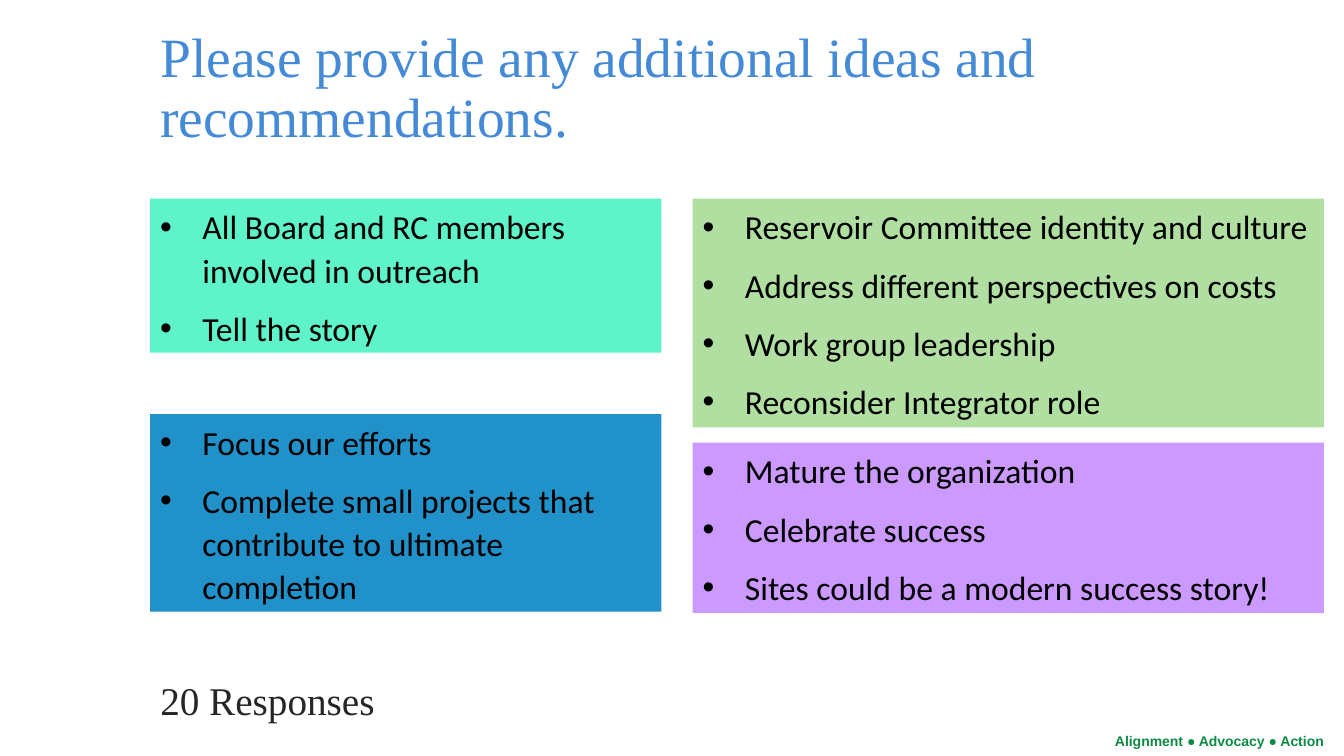
import pptx
import pptx.dml.color
import pptx.enum.shapes
import pptx.enum.text
import pptx.util
from lxml import etree
from pptx.oxml.ns import qn
from pptx.util import Inches, Pt


def rgb(value):
    return pptx.dml.color.RGBColor.from_string(value)


def write(sp, *lines, font, size, color, bold=False, bullet=None,
          spacing=1.0, after=0, anchor="TOP"):
    """Fill a shape with one paragraph per line, bulleted if asked."""
    tf = sp.text_frame
    tf.word_wrap = True
    tf.auto_size = pptx.enum.text.MSO_AUTO_SIZE.NONE
    tf.vertical_anchor = pptx.enum.text.MSO_ANCHOR[anchor]
    for i, line in enumerate(lines):
        p = tf.paragraphs[0] if i == 0 else tf.add_paragraph()
        pPr = p._p.get_or_add_pPr()
        pPr.set("marL", str(Inches(0.42) if bullet else 0))
        pPr.set("indent", str(Inches(-0.42) if bullet else 0))
        if bullet:
            etree.SubElement(pPr, qn("a:buFont"), typeface="Arial")
            etree.SubElement(pPr, qn("a:buChar"), char=bullet)
        else:
            etree.SubElement(pPr, qn("a:buNone"))
        p.alignment = pptx.enum.text.PP_ALIGN.LEFT
        p.line_spacing = spacing
        p.space_before = Pt(0)
        p.space_after = Pt(after)
        r = p.add_run()
        r.text = line
        r.font.name = font
        r.font.size = Pt(size)
        r.font.bold = bold
        r.font.color.rgb = rgb(color)


prs = pptx.Presentation()
prs.slide_width = Inches(13.33)
prs.slide_height = Inches(7.5)
slide = prs.slides.add_slide(prs.slide_layouts[1])

title, body = slide.placeholders
for sp, top, height in [(title, 0.26, 1.25), (body, 6.71, 0.53)]:
    sp.left, sp.top = Inches(1.49), Inches(top)
    sp.width, sp.height = Inches(11.5), Inches(height)
write(title, "Please provide any additional ideas and recommendations.",
      font="Times New Roman", size=39.6, color="448AD7", spacing=0.9, anchor="MIDDLE")
write(body, "20 Responses",
      font="Times New Roman", size=28, color="262626", spacing=0.9)

left_column = (1.49, 5.07)
right_column = (6.87, 6.26)
idea_boxes = [
    (left_column, 1.97, 1.53, "5FF3CA",
     ["All Board and RC members involved in outreach", "Tell the story"]),
    (left_column, 4.11, 1.96, "2191C9",
     ["Focus our efforts",
      "Complete small projects that contribute to ultimate completion"]),
    (right_column, 1.97, 2.27, "B0DFA1",
     ["Reservoir Committee identity and culture",
      "Address different perspectives on costs",
      "Work group leadership", "Reconsider Integrator role"]),
    (right_column, 4.39, 1.69, "CC99FF",
     ["Mature the organization", "Celebrate success",
      "Sites could be a modern success story!"]),
]
for (left, width), top, height, fill, ideas in idea_boxes:
    sp = slide.shapes.add_shape(
        pptx.enum.shapes.MSO_SHAPE.RECTANGLE,
        Inches(left), Inches(top), Inches(width), Inches(height))
    sp.shadow.inherit = False
    sp.fill.solid()
    sp.fill.fore_color.rgb = rgb(fill)
    sp.line.fill.background()
    write(sp, *ideas, font="Calibri", size=24, color="000000",
          bullet="•", spacing=1.07, after=10.7)

motto = slide.shapes.add_textbox(Inches(10.96), Inches(7.22), Inches(2.39), Inches(0.27))
write(motto, "Alignment ● Advocacy ● Action",
      font="Arial", size=10, color="0D8A45", bold=True)

prs.save("out.pptx")
